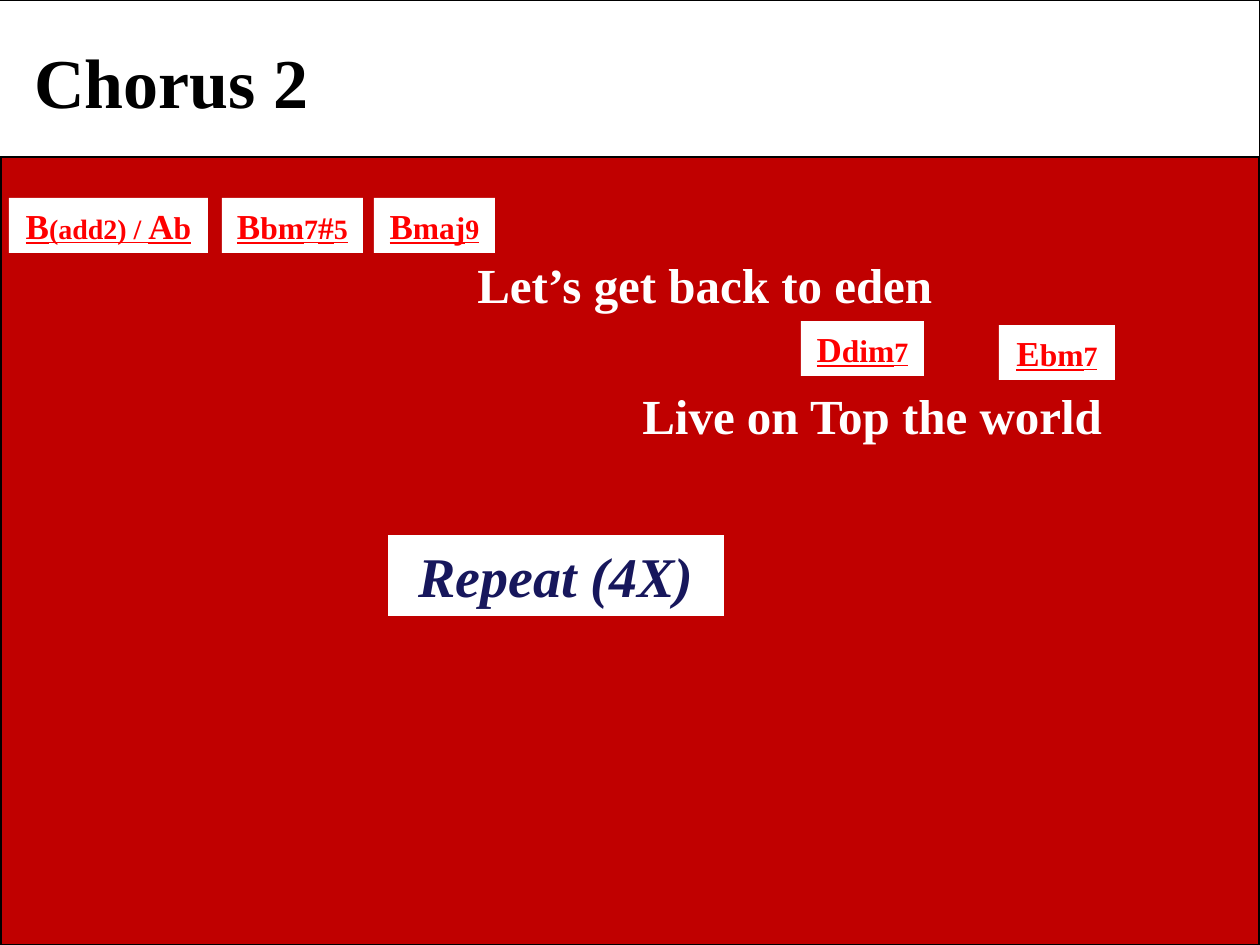
from dataclasses import dataclass

from lxml.etree import SubElement
from pptx import Presentation
from pptx.dml.color import RGBColor as RGB
from pptx.enum.shapes import MSO_SHAPE as Shape
from pptx.enum.text import MSO_ANCHOR as Anchor, MSO_AUTO_SIZE as AutoSize, PP_ALIGN as Align
from pptx.oxml.ns import qn
from pptx.util import Emu, Pt

EMU_PER_INCH, PX_PER_INCH = 914400, 126


@dataclass(frozen=True)
class Theme:
    font: str = "Times New Roman"
    paper: RGB = RGB(0xFF, 0xFF, 0xFF)
    ink: RGB = RGB(0x00, 0x00, 0x00)
    stage: RGB = RGB(0xC0, 0x00, 0x00)
    chord: RGB = RGB(0xFF, 0x00, 0x00)
    repeat: RGB = RGB(0x17, 0x17, 0x5C)
    title_size: int = 40
    repeat_size: int = 32
    lyric_size: int = 28
    root_size: int = 20
    quality_size: int = 18
    small_size: int = 16
    border: float = 0.75


THEME = Theme()
ROOT, QUALITY, SMALL = THEME.root_size, THEME.quality_size, THEME.small_size

# Each chord: left, top, width and its (text, size) pieces
CHORD_TOP, CHORD_HEIGHT = 198, 55
CHORDS = [
    (9, CHORD_TOP, 199, [("B", ROOT), ("(add2) / ", SMALL), ("A", ROOT), ("b", QUALITY)]),
    (222, CHORD_TOP, 141, [("B", ROOT), ("bm", QUALITY), ("7", SMALL), ("#", QUALITY), ("5", SMALL)]),
    (374, CHORD_TOP, 121, [("B", ROOT), ("maj", QUALITY), ("9", SMALL)]),
    (801, 321, 123, [("D", ROOT), ("dim", QUALITY), ("7", SMALL)]),
    (999, 325, 116, [("E", ROOT), ("bm", QUALITY), ("7", SMALL)]),
]


def px(length):
    return Emu(round(length * EMU_PER_INCH / PX_PER_INCH))


def add_panel(slide, box, fill, border=None):
    panel = slide.shapes.add_shape(Shape.RECTANGLE, *map(px, box))
    panel.shadow.inherit = False
    panel.fill.solid()
    panel.fill.fore_color.rgb = fill
    if border is None:
        panel.line.fill.background()
    else:
        panel.line.color.rgb = border
        panel.line.width = Pt(THEME.border)
    return panel


def write(holder, pieces, color, align=Align.LEFT, italic=False, underline=False):
    """Write (text, size) pieces as one bold paragraph."""
    frame = holder.text_frame
    frame.word_wrap = True
    frame.auto_size = AutoSize.SHAPE_TO_FIT_TEXT
    frame.vertical_anchor = Anchor.TOP
    paragraph = frame.paragraphs[0]
    paragraph.alignment = align
    # Space before, relative to the type size
    before = SubElement(paragraph._p.get_or_add_pPr(), qn("a:spcBef"))
    SubElement(before, qn("a:spcPct"), val="50000")
    for text, size in pieces:
        run = paragraph.add_run()
        run.text = text
        font = run.font
        font.name, font.size, font.bold = THEME.font, Pt(size), True
        font.italic, font.underline = italic, underline
        font.color.rgb = color


def add_lyric(slide, box, text):
    lyric = slide.shapes.add_textbox(*map(px, box))
    write(lyric, [(text, THEME.lyric_size)], THEME.paper)


def add_chord(slide, left, top, width, pieces):
    chord = add_panel(slide, (left, top, width, CHORD_HEIGHT), THEME.paper)
    write(chord, pieces, THEME.chord, align=Align.CENTER, underline=True)


def main():
    deck = Presentation()
    deck.slide_width, deck.slide_height = px(1260), px(945)
    slide = deck.slides.add_slide(deck.slide_layouts[6])

    # Background and header band
    add_panel(slide, (1, 157, 1258, 788), THEME.stage, THEME.ink)
    add_panel(slide, (-1, 0, 1261, 157), THEME.paper, THEME.ink)

    # Section title
    title = add_panel(slide, (22, 32, 420, 97), THEME.paper)
    write(title, [("Chorus 2", THEME.title_size)], THEME.ink)

    # Lyrics with their chords
    add_lyric(slide, (465, 248, 794, 72), "Let’s get back to eden")
    add_lyric(slide, (630, 379, 557, 72), "Live on Top the world")
    for chord in CHORDS:
        add_chord(slide, *chord)

    # Repeat mark
    repeat = add_panel(slide, (388, 535, 336, 81), THEME.paper)
    write(repeat, [("Repeat (4X)", THEME.repeat_size)], THEME.repeat,
          align=Align.CENTER, italic=True)

    deck.save("out.pptx")


if __name__ == "__main__":
    main()
